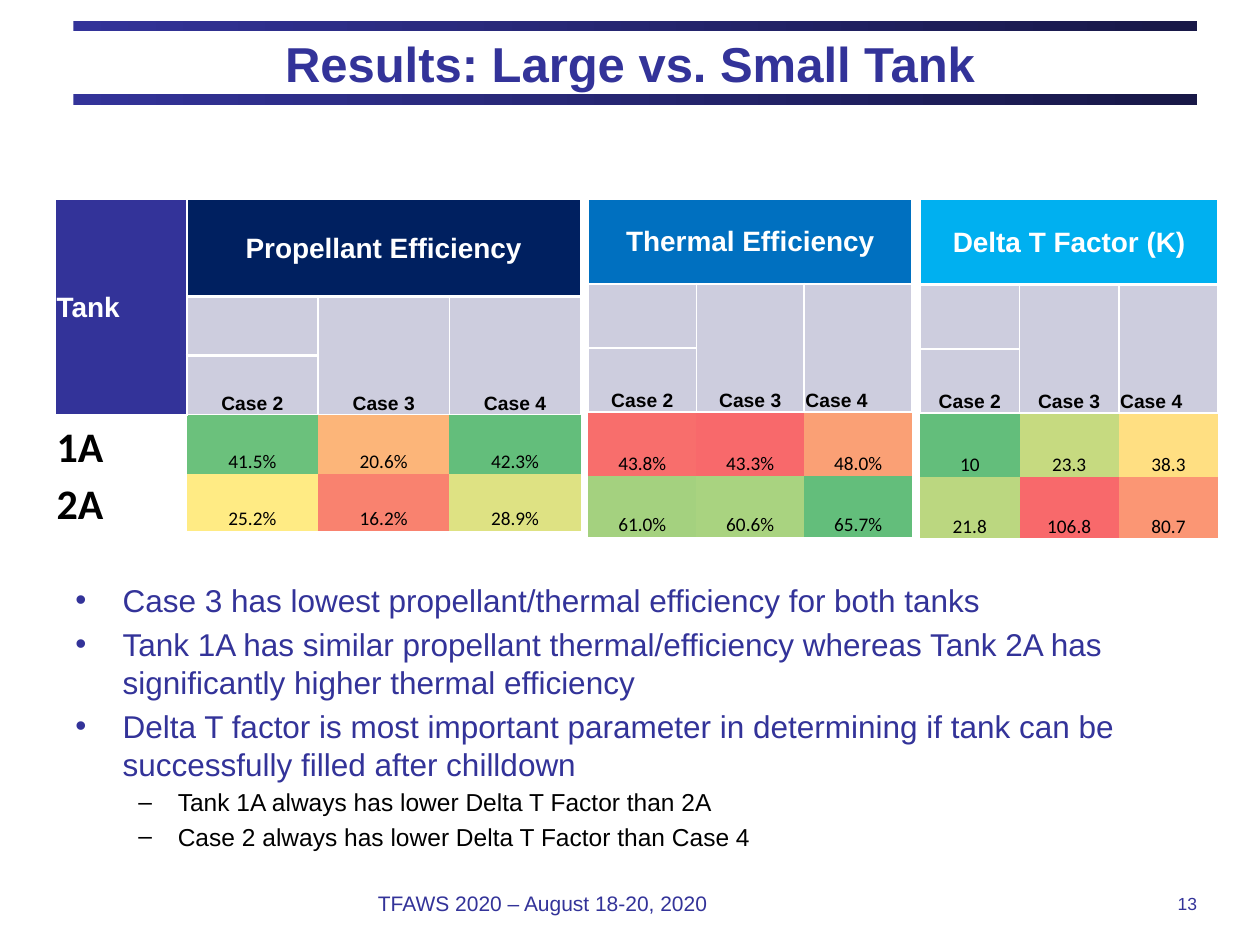
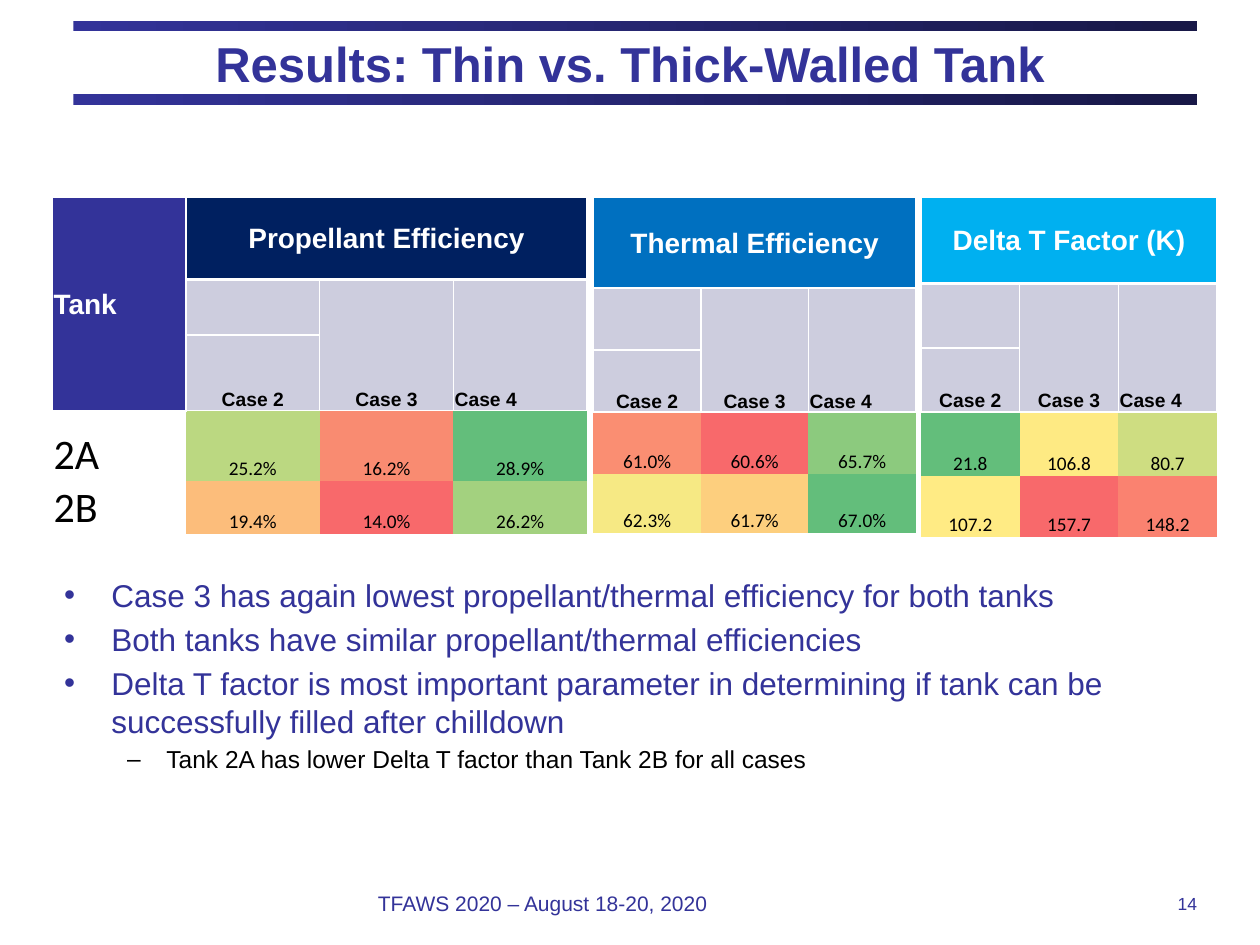
"""Build two slides that compare tank results with heat-mapped tables."""
from lxml import etree
from pptx import Presentation
from pptx.dml.color import RGBColor
from pptx.enum.shapes import MSO_SHAPE
from pptx.enum.text import MSO_ANCHOR, PP_ALIGN
from pptx.oxml.ns import qn
from pptx.util import Pt

RECT = MSO_SHAPE.RECTANGLE
MIDDLE, BOTTOM = MSO_ANCHOR.MIDDLE, MSO_ANCHOR.BOTTOM
LEFT, CENTER, RIGHT = PP_ALIGN.LEFT, PP_ALIGN.CENTER, PP_ALIGN.RIGHT

BLUE = RGBColor(0x33, 0x33, 0x99)
DARK = RGBColor(0x18, 0x18, 0x47)
NAVY = RGBColor(0x00, 0x20, 0x60)
MID = RGBColor(0x00, 0x70, 0xC0)
SKY = RGBColor(0x00, 0xB0, 0xF0)
PALE = RGBColor(0xCD, 0xCD, 0xDE)
WHITE = RGBColor(0xFF, 0xFF, 0xFF)
BLACK = RGBColor(0x00, 0x00, 0x00)

NO_STYLE = "{2D5ABB26-0587-4C30-8999-92F81FD0307C}"
FOOTER = "TFAWS 2020 – August 18-20, 2020"
CASES = ("Case 2", "Case 3", "Case 4")
HEADS = (("Propellant Efficiency", NAVY), ("Thermal Efficiency", MID), ("Delta T Factor (K)", SKY))
BULLETS = (("•", 27, 27, 18, BLUE), ("–", 58.5, 22.5, 14, BLACK))
FACTOR = (
    "Delta T factor is most important parameter in determining if tank can be "
    "successfully filled after chilldown"
)

SLIDES = [
    dict(
        title="Results: Large vs. Small Tank", page="13", top=113.8, body=(36, 328.3),
        tanks=("1A", "2A"), bold=True, last=(CENTER, LEFT, LEFT),
        spots=((31.7, 300.2), (336.2, 185.1), (525.8, 170.4)),
        rows=((55.6, 33.8, 33.8, 33.8, 32.4), (48.4, 36.6, 36.6, 36.6, 34.8),
              (48.8, 36.7, 36.7, 36.7, 35)),
        data=(
            ((("41.5%", "6BC17C"), ("20.6%", "FCB579"), ("42.3%", "63BE7B")),
             (("25.2%", "FFEB84"), ("16.2%", "F9826F"), ("28.9%", "DEE283"))),
            ((("43.8%", "F86E6C"), ("43.3%", "F8696B"), ("48.0%", "FAA075")),
             (("61.0%", "A4D17F"), ("60.6%", "A9D380"), ("65.7%", "63BE7B"))),
            ((("10", "63BE7B"), ("23.3", "C6DA80"), ("38.3", "FFDF82")),
             (("21.8", "BBD780"), ("106.8", "F8696B"), ("80.7", "FB9674"))),
        ),
        points=(
            (0, "Case 3 has lowest propellant/thermal efficiency for both tanks"),
            (0, "Tank 1A has similar propellant thermal/efficiency whereas Tank 2A has "
                "significantly higher thermal efficiency"),
            (0, FACTOR),
            (1, "Tank 1A always has lower Delta T Factor than 2A"),
            (1, "Case 2 always has lower Delta T Factor than Case 4"),
        ),
    ),
    dict(
        title="Results: Thin vs. Thick-Walled Tank", page="14", top=113, body=(29.5, 325.4),
        tanks=("2A", "2B"), bold=False, last=(LEFT, LEFT, LEFT),
        spots=((29.9, 305.6), (339.1, 184.3), (526.3, 169.2)),
        rows=((46.8, 31.7, 43.2, 40.3, 30.2), (51.8, 35.4, 35.4, 35.4, 33.8),
              (49, 36.7, 36.7, 36.7, 34.6)),
        data=(
            ((("25.2%", "BBD881"), ("16.2%", "F98B71"), ("28.9%", "63BE7B")),
             (("19.4%", "FCBD7B"), ("14.0%", "F8696B"), ("26.2%", "A3D17F"))),
            ((("61.0%", "FA8E72"), ("60.6%", "F8696B"), ("65.7%", "8CCA7E")),
             (("62.3%", "F6E984"), ("61.7%", "FDCF7E"), ("67.0%", "63BE7B"))),
            ((("21.8", "63BE7B"), ("106.8", "FEEA83"), ("80.7", "CEDD81")),
             (("107.2", "FFEB84"), ("157.7", "F8696B"), ("148.2", "FA8270"))),
        ),
        points=(
            (0, "Case 3 has again lowest propellant/thermal efficiency for both tanks"),
            (0, "Both tanks have similar propellant/thermal efficiencies"),
            (0, FACTOR),
            (1, "Tank 2A has lower Delta T factor than Tank 2B for all cases"),
        ),
    ),
]


def write(par, text, size=11, color=BLACK, bold=False, align=LEFT, font="Arial"):
    """Put formatted text in a paragraph."""
    par.alignment = align
    run = par.add_run()
    run.text = text
    run.font.size, run.font.bold, run.font.name = Pt(size), bold, font
    run.font.color.rgb = color


def inset(frame, side):
    """Set the side margins of a frame and drop the others."""
    frame.margin_left = frame.margin_right = Pt(side)
    frame.margin_top = frame.margin_bottom = 0


def add_box(slide, *place):
    """Add a wrapping text box and return its frame."""
    frame = slide.shapes.add_textbox(*map(Pt, place)).text_frame
    frame.word_wrap = True
    return frame


def add_frame(slide, title, page):
    """Add the bands, title, footer and page number."""
    for top in (54, 12):
        band = slide.shapes.add_shape(RECT, Pt(42), Pt(top), Pt(642), Pt(6))
        band.shadow.inherit = False
        band.line.fill.background()
        band.fill.gradient()
        band.fill.gradient_angle = 0
        for stop, color in zip(band.fill.gradient_stops, (BLUE, DARK)):
            stop.color.rgb = color
    head = slide.shapes.title
    head.left, head.top, head.width, head.height = map(Pt, (36, 15.1, 648, 42))
    frame = head.text_frame
    frame.vertical_anchor = MIDDLE
    inset(frame, 7.2)
    write(frame.paragraphs[0], title, size=28, color=BLUE, bold=True, align=CENTER)
    for left, width, text, size, align in (
        (216, 288, FOOTER, 12, LEFT), (534, 150, page, 10, RIGHT),
    ):
        frame = add_box(slide, left, 504, width, 24)
        frame.vertical_anchor = MIDDLE
        inset(frame, 0)
        write(frame.paragraphs[0], text, size=size, color=BLUE, align=align)


def style(cell, text="", fill=None, anchor=BOTTOM, edges=None, **form):
    """Format one table cell; edges maps sides to white line widths."""
    cell.margin_left = cell.margin_right = cell.margin_top = Pt(0.72)
    cell.margin_bottom = 0
    cell.vertical_anchor = anchor
    props = cell._tc.get_or_add_tcPr()
    for side, width in (edges or {}).items():
        line = etree.SubElement(props, qn(f"a:ln{side}"), w=str(Pt(width)))
        solid = etree.SubElement(line, qn("a:solidFill"))
        etree.SubElement(solid, qn("a:srgbClr"), val=str(WHITE))
    if fill is None:
        cell.fill.background()
    else:
        cell.fill.solid()
        cell.fill.fore_color.rgb = fill
    if text:
        write(cell.text_frame.paragraphs[0], text, **form)


def add_grid(slide, spot, top, rows, head, data, last, tanks=(), bold=False):
    """Add one results table, with a tank column when tanks are given."""
    first = 1 if tanks else 0
    cols = first + len(CASES)
    left, width = spot
    grid = slide.shapes.add_table(
        len(rows), cols, Pt(left), Pt(top), Pt(width), Pt(sum(rows))).table
    grid._tbl.tblPr.find(qn("a:tableStyleId")).text = NO_STYLE
    grid.first_row = grid.horz_banding = False
    for row, high in zip(grid.rows, rows):
        row.height = Pt(high)
    for col in grid.columns:
        col.width = Pt(width / cols)

    lead = dict(anchor=MIDDLE, size=16, color=WHITE, bold=True,
                edges=dict(L=1, R=1, T=1, B=1.5))
    if tanks:
        grid.cell(0, 0).merge(grid.cell(2, 0))
        style(grid.cell(0, 0), "Tank", BLUE, **lead)
        for row, tank in enumerate(tanks, 3):
            style(grid.cell(row, 0), tank, size=24, bold=bold, font="Calibri")
    name, color = head
    grid.cell(0, first).merge(grid.cell(0, cols - 1))
    style(grid.cell(0, first), name, color, align=CENTER, **lead)

    side = 1.5 if tanks else 1
    style(grid.cell(1, first), fill=PALE, edges=dict(L=side, R=1, T=1.5))
    style(grid.cell(2, first), CASES[0], PALE, bold=True, align=CENTER,
          edges=dict(L=side, R=1, B=1))
    for col, case, align in zip(range(first + 1, cols), CASES[1:], (CENTER, last)):
        grid.cell(1, col).merge(grid.cell(2, col))
        style(grid.cell(1, col), case, PALE, bold=True, align=align,
              edges=dict(L=1, R=1, T=1.5, B=1))
    for row, line in enumerate(data, 3):
        for col, (text, tone) in enumerate(line, first):
            style(grid.cell(row, col), text, RGBColor.from_string(tone),
                  align=CENTER, font="Calibri")


def add_points(slide, spot, points):
    """Add the bulleted findings."""
    frame = add_box(slide, *spot, 690.5, 156)
    for num, (level, text) in enumerate(points):
        mark, left, hang, size, color = BULLETS[level]
        par = frame.add_paragraph() if num else frame.paragraphs[0]
        par.level = level
        props = par._p.get_or_add_pPr()
        props.set("marL", str(Pt(left)))
        props.set("indent", str(-Pt(hang)))
        etree.SubElement(props, qn("a:buFont"), typeface="Arial")
        etree.SubElement(props, qn("a:buChar"), char=mark)
        if num:
            par.space_before = Pt(size * 0.2)
        write(par, text, size=size, color=color)


def main():
    """Build and save the deck."""
    deck = Presentation()
    deck.slide_width, deck.slide_height = Pt(720), Pt(540)
    for item in SLIDES:
        slide = deck.slides.add_slide(deck.slide_layouts[5])
        add_frame(slide, item["title"], item["page"])
        parts = zip(item["spots"], item["rows"], HEADS, item["data"], item["last"])
        for num, (spot, rows, head, data, last) in enumerate(parts):
            tanks = () if num else item["tanks"]
            add_grid(slide, spot, item["top"], rows, head, data, last, tanks, item["bold"])
        add_points(slide, item["body"], item["points"])
    deck.save("out.pptx")


if __name__ == "__main__":
    main()
